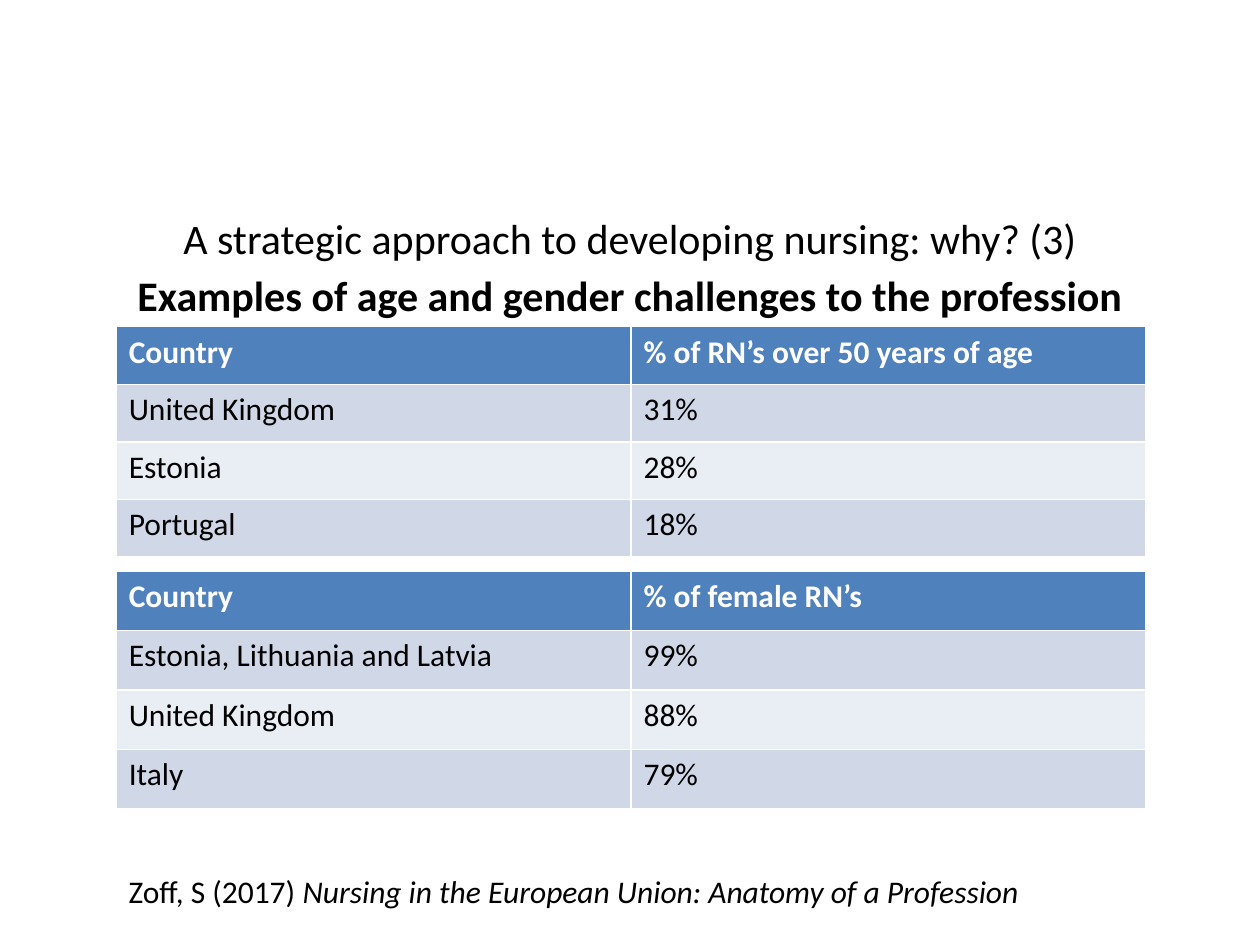
from dataclasses import dataclass

from pptx import Presentation
from pptx.dml.color import RGBColor
from pptx.enum.text import MSO_ANCHOR, PP_ALIGN
from pptx.util import Pt

LEFT, CENTER = PP_ALIGN.LEFT, PP_ALIGN.CENTER
TOP, MIDDLE = MSO_ANCHOR.TOP, MSO_ANCHOR.MIDDLE
FONT = "Calibri"
BLACK, WHITE = "000000", "FFFFFF"
HEADER_FILL = "4F81BD"
BAND_FILLS = ("D0D8E8", "E9EDF4")
TABLE_LEFT, TABLE_WIDTH = 66.4, 588.4


@dataclass
class TextRun:
    """A piece of text with its emphasis."""
    text: str
    bold: bool = False
    italic: bool = False


@dataclass
class TextBlock:
    """A one-paragraph text box, in points."""
    left: float
    top: float
    width: float
    height: float
    size: float
    runs: list[TextRun]
    align: PP_ALIGN = LEFT
    anchor: MSO_ANCHOR = TOP


@dataclass
class CountryTable:
    """A two-column table of countries and percentages, in points."""
    top: float
    row_height: float
    measure: str
    rows: list[tuple[str, str]]


BLOCKS = [
    TextBlock(51.4, 92.2, 617.2, 87.1, 24,
              [TextRun("A strategic approach to developing nursing: why? (3)")],
              CENTER, MIDDLE),
    TextBlock(51.4, 150.5, 617.2, 36, 24,
              [TextRun("Examples of age and gender challenges to the profession", bold=True)],
              CENTER),
    TextBlock(TABLE_LEFT, 494.6, TABLE_WIDTH, 29, 18,
              [TextRun("Zoff, S (2017) "),
               TextRun("Nursing in the European Union: Anatomy of a Profession", italic=True)]),
]

TABLES = [
    CountryTable(186.7, 32.9, "% of RN’s over 50 years of age",
                 [("United Kingdom", "31%"), ("Estonia", "28%"), ("Portugal", "18%")]),
    CountryTable(326.2, 34, "% of female RN’s",
                 [("Estonia, Lithuania and Latvia", "99%"), ("United Kingdom", "88%"),
                  ("Italy", "79%")]),
]


def rgb(color: str) -> RGBColor:
    """Turn a hex string into a colour."""
    return RGBColor.from_string(color)


def style_font(font, size: float, color: str, bold: bool = False, italic: bool = False) -> None:
    """Set the face, size, colour and emphasis of a font."""
    font.name, font.size = FONT, Pt(size)
    font.bold, font.italic = bold, italic
    font.color.rgb = rgb(color)


def draw_block(s, block: TextBlock) -> None:
    """Draw a text box on the slide."""
    sp = s.shapes.add_textbox(Pt(block.left), Pt(block.top), Pt(block.width), Pt(block.height))
    tf = sp.text_frame
    tf.word_wrap = True
    tf.vertical_anchor = block.anchor
    p = tf.paragraphs[0]
    p.alignment = block.align
    for item in block.runs:
        r = p.add_run()
        r.text = item.text
        style_font(r.font, block.size, BLACK, item.bold, item.italic)


def draw_table(s, table: CountryTable) -> None:
    """Draw a table with a header row and banded rows."""
    rows = [("Country", table.measure), *table.rows]
    grid = s.shapes.add_table(len(rows), 2, Pt(TABLE_LEFT), Pt(table.top), Pt(TABLE_WIDTH),
                              Pt(table.row_height * len(rows))).table
    for i, values in enumerate(rows):
        header = i == 0
        fill = HEADER_FILL if header else BAND_FILLS[(i - 1) % 2]
        for j, value in enumerate(values):
            cell = grid.cell(i, j)
            cell.fill.solid()
            cell.fill.fore_color.rgb = rgb(fill)
            cell.text_frame.text = value
            r = cell.text_frame.paragraphs[0].runs[0]
            style_font(r.font, 18, WHITE if header else BLACK, bold=header)


def main() -> None:
    """Build and save the slide."""
    prs = Presentation()
    prs.slide_width, prs.slide_height = Pt(720), Pt(540)
    s = prs.slides.add_slide(prs.slide_layouts[6])
    for block in BLOCKS:
        draw_block(s, block)
    for table in TABLES:
        draw_table(s, table)
    prs.save("out.pptx")


if __name__ == "__main__":
    main()
